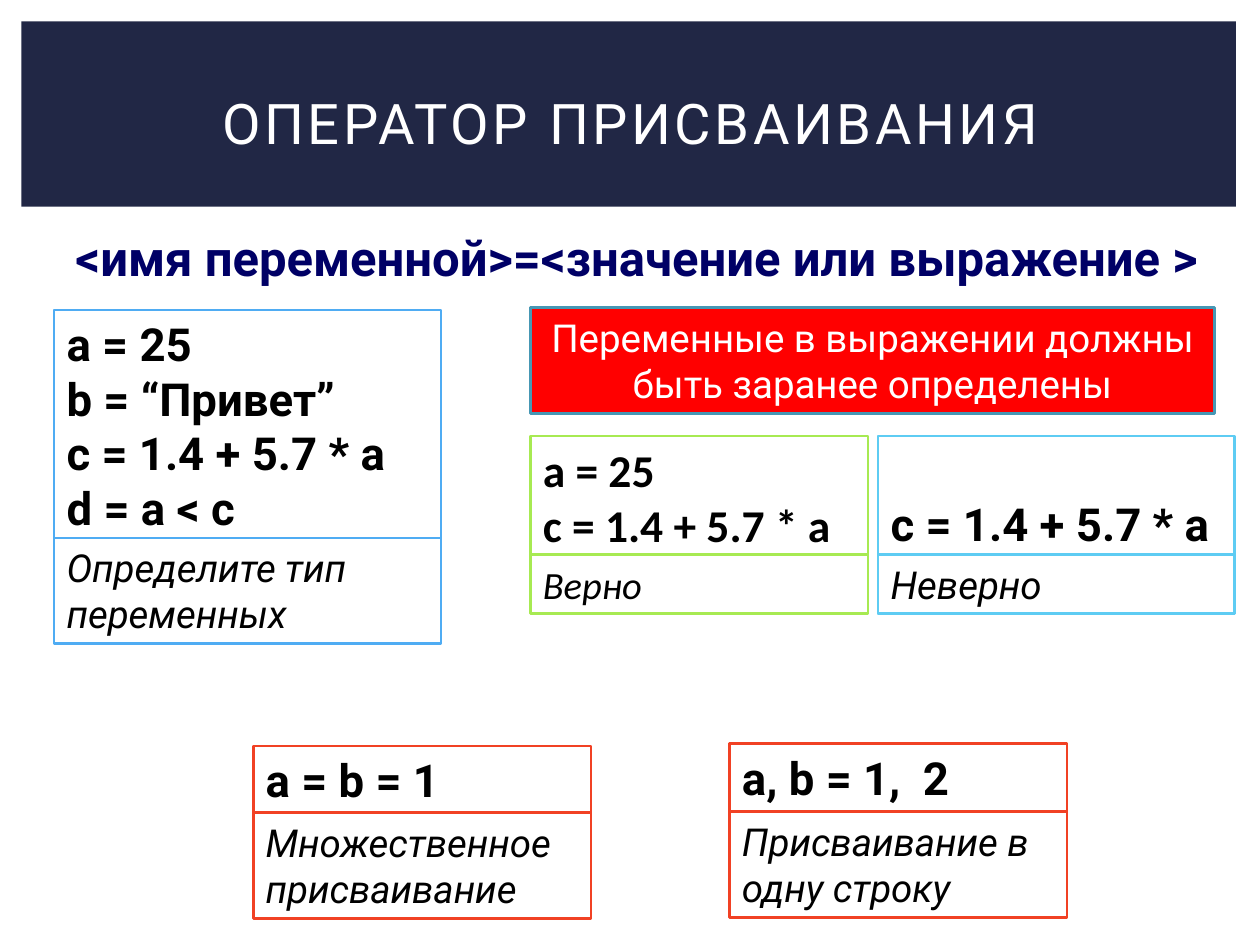
from dataclasses import dataclass

from pptx import Presentation
from pptx.dml.color import RGBColor
from pptx.enum.shapes import MSO_SHAPE
from pptx.enum.text import MSO_ANCHOR, PP_ALIGN
from pptx.util import Inches, Pt

RECT = MSO_SHAPE.RECTANGLE
TOP, MIDDLE = MSO_ANCHOR.TOP, MSO_ANCHOR.MIDDLE
LEFT, CENTER = PP_ALIGN.LEFT, PP_ALIGN.CENTER

UNIT = 0.1  # inches; the slide is a grid of 100 columns by 75 rows
COLS, ROWS = 100, 75
CODE_SIZE, NOTE_SIZE = 26, 22
WHITE, BLACK = "FFFFFF", "000000"


@dataclass(frozen=True)
class Box:
    x: float
    y: float
    w: float
    h: float


@dataclass(frozen=True)
class Style:
    size: float
    color: str = BLACK
    font: str = "Roboto"
    bold: bool = False
    italic: bool = False
    align: PP_ALIGN = LEFT
    spacing: float = 0  # points between letters


@dataclass(frozen=True)
class Card:
    """Lines of code with a caption in a second frame below."""
    code_box: Box
    note_y: float
    note_h: float
    color: str
    code: tuple[str, ...]
    note: str
    font: str = "Roboto"
    skipped_rows: float = 0  # empty space above the code


CARDS = (
    Card(Box(4.3, 24.6, 30.7, 18.5), 42.7, 8.4, "4FACF3",
         ("a = 25", "b = “Привет”", "c = 1.4 + 5.7 * a", "d = a < c"),
         "Определите тип переменных"),
    Card(Box(42.1, 34.6, 26.8, 9.8), 44, 4.7, "A7EA52",
         ("a = 25", "c = 1.4 + 5.7 * a"), "Верно", font="Calibri"),
    Card(Box(69.7, 34.6, 28.3, 14.1), 44, 4.7, "5ECCF3",
         ("c = 1.4 + 5.7 * a",), "Неверно", skipped_rows=4.3),
    Card(Box(20.1, 59.2, 26.8, 5.4), 64.5, 8.4, "F14124",
         ("a = b = 1",), "Множественное присваивание"),
    Card(Box(57.9, 59, 26.8, 5.4), 64.4, 8.4, "F14124",
         ("a, b = 1,  2",), "Присваивание в одну строку"),
)


def rgb(color: str) -> RGBColor:
    return RGBColor.from_string(color)


def grid(n: float) -> int:
    return Inches(n * UNIT)


def place(box: Box) -> tuple[int, ...]:
    return tuple(grid(n) for n in (box.x, box.y, box.w, box.h))


def write(sp, lines: tuple[str, ...], style: Style, anchor=TOP):
    tf = sp.text_frame
    tf.word_wrap = True
    tf.vertical_anchor = anchor
    for i, line in enumerate(lines):
        p = tf.paragraphs[0] if i == 0 else tf.add_paragraph()
        p.alignment = style.align
        r = p.add_run()
        r.text = line
        r.font.name, r.font.size = style.font, Pt(style.size)
        r.font.bold, r.font.italic = style.bold, style.italic
        r.font.color.rgb = rgb(style.color)
        if style.spacing:
            r._r.get_or_add_rPr().set("spc", str(int(style.spacing * 100)))
    return tf


def add_rect(s, box: Box, fill: str, line: str | None = None):
    sp = s.shapes.add_shape(RECT, *place(box))
    sp.shadow.inherit = False
    sp.fill.solid()
    sp.fill.fore_color.rgb = rgb(fill)
    if line:
        sp.line.color.rgb = rgb(line)
        sp.line.width = Pt(1.5)
    else:
        sp.line.fill.background()
    return sp


def add_card(s, card: Card) -> None:
    box = card.code_box
    sp = add_rect(s, box, WHITE, card.color)
    tf = write(sp, card.code, Style(CODE_SIZE, font=card.font, bold=True))
    tf.margin_top += grid(card.skipped_rows)
    note_box = Box(box.x, card.note_y, box.w, card.note_h)
    sp = add_rect(s, note_box, WHITE, card.color)
    write(sp, (card.note,), Style(NOTE_SIZE, font=card.font, italic=True))


def main() -> None:
    prs = Presentation()
    prs.slide_width, prs.slide_height = grid(COLS), grid(ROWS)
    s = prs.slides.add_slide(prs.slide_layouts[6])

    # Title band
    add_rect(s, Box(1.7, 1.7, 96.4, 14.7), "212745")
    sp = s.shapes.add_textbox(*place(Box(4.2, 3.9, 91.7, 11.5)))
    write(sp, ("ОПЕРАТОР ПРИСВАИВАНИЯ",),
          Style(32, WHITE, align=CENTER, spacing=2), MIDDLE)

    # General form of the assignment, kept on one line
    sp = s.shapes.add_textbox(*place(Box(3.5, 17.6, 94.5, 5.7)))
    tf = write(sp, ("<имя переменной>=<значение или выражение >",),
               Style(28, "000066", bold=True))
    tf.paragraphs[0]._p.get_or_add_pPr().set("indent", str(grid(1.5)))

    # Warning
    sp = add_rect(s, Box(42.1, 24.4, 54.3, 8.4), "FF0000", "4697B4")
    write(sp, ("Переменные в выражении должны быть заранее определены",),
          Style(NOTE_SIZE, WHITE, align=CENTER))

    # Examples
    for card in CARDS:
        add_card(s, card)

    prs.save("out.pptx")


if __name__ == "__main__":
    main()
